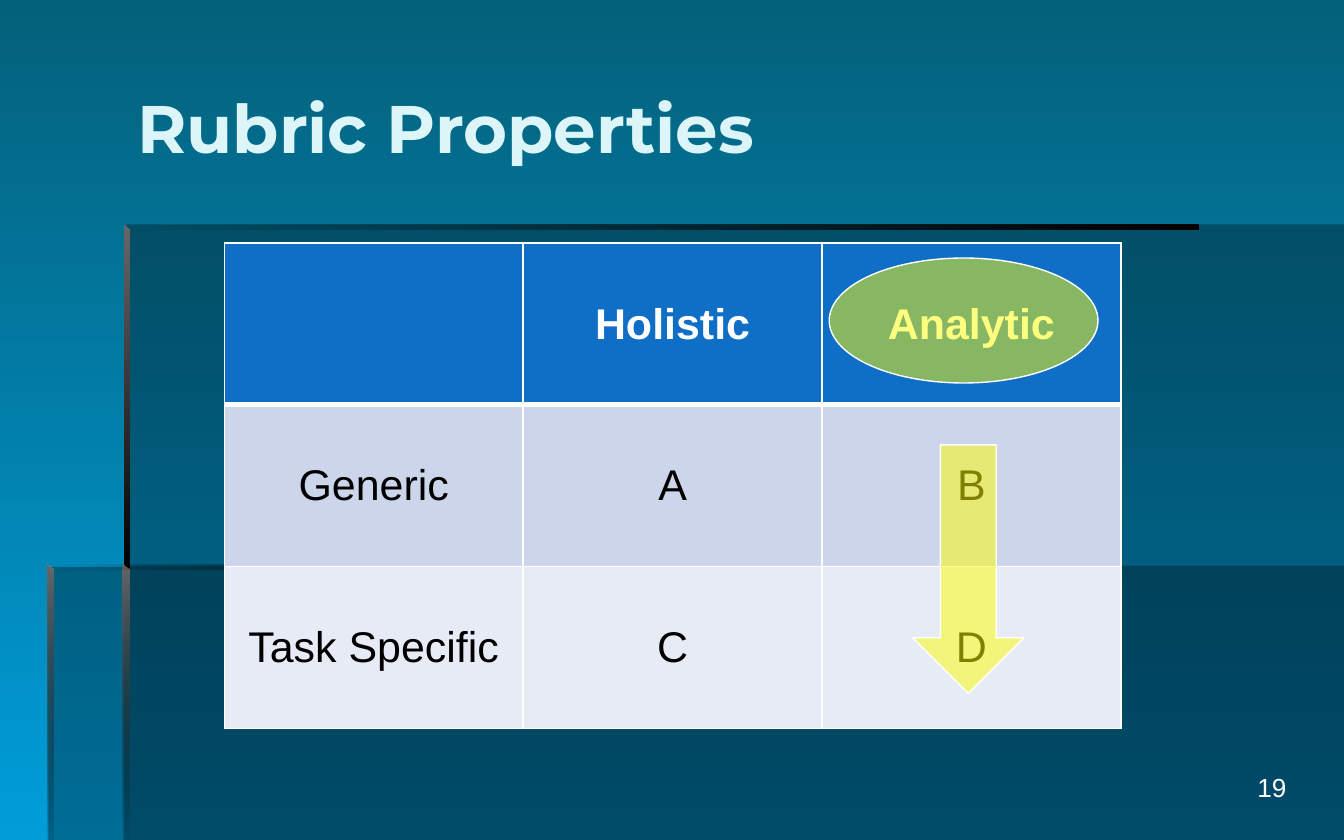
import pptx
import pptx.dml.color
import pptx.enum.shapes
import pptx.enum.text
import pptx.oxml
import pptx.oxml.ns
import pptx.util
from pptx.util import Inches

COLORS = {
    "sky_top": "04617B", "sky_bottom": "009DD9", "title": "DBF5F9",
    "white": "FFFFFF", "black": "000000", "bevel": "666666", "marker": "FFFF00",
    "header": "0F6FC6", "band": "CCD5EA", "pale": "E7EBF5",
}
ALIGN = pptx.enum.text.PP_ALIGN
MIDDLE = pptx.enum.text.MSO_ANCHOR.MIDDLE
SHAPES = pptx.enum.shapes.MSO_SHAPE
ACROSS, DOWN = 0, 270  # python-pptx counts gradient angles counter-clockwise


def rgb(name):
    return pptx.dml.color.RGBColor.from_string(COLORS[name])


class SlideBuilder:
    font = "Arial"

    def __init__(self, page):
        self.page = page

    def set_text(self, frame, text, size, color, align, bold=False, font=None):
        frame.text = text
        para = frame.paragraphs[0]
        para.alignment = align
        para.font.name = font or self.font
        para.font.size = pptx.util.Pt(size)
        para.font.bold = bold
        para.font.color.rgb = rgb(color)

    def gradient(self, fill, names, angle):
        fill.gradient()
        fill.gradient_angle = angle
        for stop, name, position in zip(fill.gradient_stops, names, (0, 1)):
            stop.color.rgb = rgb(name)
            stop.position = position

    def set_opacity(self, shape, percents):
        """Give each fill colour of the shape its opacity, in order."""
        colors = shape.element.spPr.iter(pptx.oxml.ns.qn("a:srgbClr"))
        for color, percent in zip(list(colors), percents):
            if percent < 100:
                alpha = color.makeelement(pptx.oxml.ns.qn("a:alpha"), {"val": str(percent * 1000)})
                color.append(alpha)

    def background(self, top, bottom):
        self.gradient(self.page.background.fill, (top, bottom), DOWN)

    def polygon(self, points, names, opacities, angle=DOWN):
        """Draw a borderless outline; one colour is solid, two make a gradient."""
        corners = [(Inches(x), Inches(y)) for x, y in points]
        builder = self.page.shapes.build_freeform(*corners[0])
        builder.add_line_segments(corners[1:], close=True)
        shape = builder.convert_to_shape()
        shape.shadow.inherit = False
        shape.line.fill.background()
        if len(names) == 1:
            shape.fill.solid()
            shape.fill.fore_color.rgb = rgb(names[0])
        else:
            self.gradient(shape.fill, names, angle)
        self.set_opacity(shape, opacities)

    def title(self, text, left, top, width, height):
        box = self.page.shapes.title
        box.left, box.top, box.width, box.height = map(Inches, (left, top, width, height))
        box.text_frame.vertical_anchor = MIDDLE
        self.set_text(box.text_frame, text, 36, "title", ALIGN.LEFT, True, "Montserrat")

    def text(self, text, left, top, width, height, size, align):
        box = self.page.shapes.add_textbox(*map(Inches, (left, top, width, height)))
        box.text_frame.word_wrap = True
        self.set_text(box.text_frame, text, size, "white", align)

    def border(self, cell, widths):
        for side, points in zip("LRTB", widths):
            cell._tc.get_or_add_tcPr().append(pptx.oxml.parse_xml(
                f'<a:ln{side} {pptx.oxml.ns.nsdecls("a")} w="{pptx.util.Pt(points)}">'
                f'<a:solidFill><a:srgbClr val="{COLORS["white"]}"/></a:solidFill></a:ln{side}>'))

    def table(self, rows, fills, left, top, width, height):
        frame = self.page.shapes.add_table(
            len(rows), len(rows[0]), *map(Inches, (left, top, width, height)))
        for r, row in enumerate(rows):
            header = r == 0
            for c, text in enumerate(row):
                cell = frame.table.cell(r, c)
                self.border(cell, (1, 1, 3 if r == 1 else 1, 3 if header else 1))
                cell.fill.solid()
                cell.fill.fore_color.rgb = rgb(fills[r])
                cell.vertical_anchor = MIDDLE
                cell.margin_top = cell.margin_bottom = Inches(0.04)
                self.set_text(cell.text_frame, text, 23, "white" if header else "black",
                              ALIGN.CENTER, header)

    def highlight(self, kind, left, top, width, height):
        shape = self.page.shapes.add_shape(kind, *map(Inches, (left, top, width, height)))
        shape.shadow.inherit = False
        shape.fill.solid()
        shape.fill.fore_color.rgb = rgb("marker")
        self.set_opacity(shape, [50])
        shape.line.color.rgb = rgb("white")
        shape.line.width = pptx.util.Pt(0.75)


def bar(left, top, right, bottom):
    return [(left, top), (left, bottom), (right, bottom), (right, top)]


def post(left, top, bottom):
    """Upright edge whose top is cut on the slant."""
    return [(left, top), (left, bottom), (left + 0.05, bottom), (left + 0.05, top + 0.04)]


def main():
    deck = pptx.Presentation()
    deck.slide_width, deck.slide_height = Inches(10), Inches(6.25)
    slide = SlideBuilder(deck.slides.add_slide(deck.slide_layouts[5]))

    slide.background("sky_top", "sky_bottom")
    slide.polygon(bar(0.92, 4.21, 10, 6.25), ["black"], [30])
    steps = [(0.94, 4.22), (0.36, 4.22), (0.36, 6.25), (10, 6.25), (10, 1.67), (0.94, 1.67)]
    slide.polygon(steps, ["black"], [30])
    edges = [
        (bar(0.92, 1.67, 8.92, 1.71), "black", (0, 100), ACROSS),
        (post(0.92, 1.67, 4.25), "bevel", (100, 100), DOWN),
        (post(0.91, 4.2, 6.25), "bevel", (100, 0), DOWN),
        (bar(0.35, 4.2, 5.35, 4.24), "black", (0, 100), ACROSS),
        (post(0.35, 4.2, 6.25), "bevel", (100, 10), DOWN),
    ]
    for points, start, opacities, angle in edges:
        slide.polygon(points, (start, "black"), opacities, angle)

    slide.title("Rubric Properties", 0.92, 0.42, 7.92, 1.04)
    rows = [("", "Holistic", "Analytic"), ("Generic", "A", "B"), ("Task Specific", "C", "D")]
    slide.table(rows, ("header", "band", "pale"), 1.67, 1.81, 6.67, 3.61)
    slide.text("19", 7.59, 5.69, 2.08, 0.43, 14, ALIGN.RIGHT)
    slide.highlight(SHAPES.OVAL, 6.17, 1.92, 2, 0.93)
    slide.highlight(SHAPES.DOWN_ARROW, 6.79, 3.31, 0.83, 1.85)
    deck.save("out.pptx")


if __name__ == "__main__":
    main()
